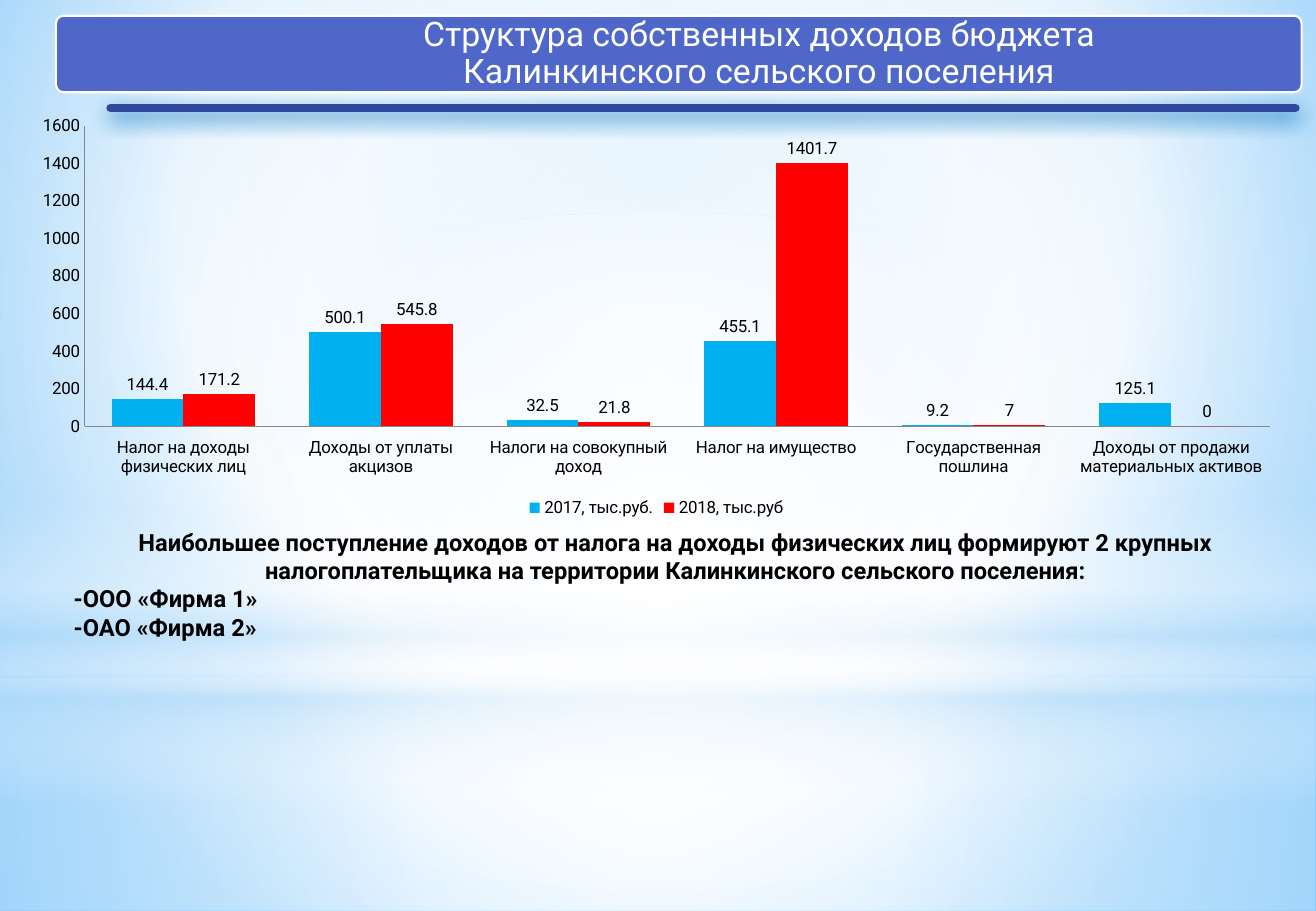
import dataclasses

import lxml.etree
import pptx
import pptx.chart.data
import pptx.dml.color
import pptx.enum.chart
import pptx.enum.shapes
import pptx.enum.text
import pptx.oxml.ns
import pptx.util

Cm = pptx.util.Cm
Pt = pptx.util.Pt
qn = pptx.oxml.ns.qn
SHAPE = pptx.enum.shapes.MSO_SHAPE
ALIGN = pptx.enum.text.PP_ALIGN
ANCHOR = pptx.enum.text.MSO_ANCHOR


@dataclasses.dataclass(frozen=True)
class Theme:
    font: str = "Roboto"
    white: str = "FFFFFF"
    black: str = "000000"
    pale: str = "B4DCFA"
    sky: str = "9ED5FF"
    azure: str = "5BB9FF"
    banner: str = "4E67C8"
    rule: str = "31489F"
    shadow: str = "0070C0"
    axis: str = "878787"
    year_2017: str = "00B0F0"
    year_2018: str = "FF0000"
    title_size: int = 20
    body_size: int = 14
    chart_size: int = 10


THEME = Theme()
WIDTH, HEIGHT = 27.51, 19.05
CENTRE = (50, 50, 50, 50)

CATEGORIES = [
    "Налог на доходы физических лиц",
    "Доходы от уплаты акцизов",
    "Налоги на совокупный доход",
    "Налог на имущество",
    "Государственная пошлина",
    "Доходы от продажи материальных активов",
]
SERIES = [
    ("2017, тыс.руб.", (144.4, 500.1, 32.5, 455.1, 9.2, 125.1), THEME.year_2017),
    ("2018, тыс.руб", (171.2, 545.8, 21.8, 1401.7, 7, 0), THEME.year_2018),
]


def rgb(color):
    return pptx.dml.color.RGBColor.from_string(color)


def add_node(parent, tag, **attrs):
    return lxml.etree.SubElement(parent, qn(tag), {k: str(v) for k, v in attrs.items()})


def set_gradient(fill, owner, stops, focus=None):
    fill.solid()
    solid = owner.find(".//" + qn("a:solidFill"))
    grad = lxml.etree.Element(qn("a:gradFill"), rotWithShape="1")
    stop_list = add_node(grad, "a:gsLst")
    for position, color, opacity in stops:
        gs = add_node(stop_list, "a:gs", pos=position * 1000)
        clr = add_node(gs, "a:srgbClr", val=color)
        if opacity < 100:
            add_node(clr, "a:alpha", val=opacity * 1000)
    if focus:
        circle = add_node(grad, "a:path", path="circle")
        sides = {side: pct * 1000 for side, pct in zip("ltrb", focus)}
        add_node(circle, "a:fillToRect", **sides)
    else:
        add_node(grad, "a:lin", ang=5400000, scaled=0)
    solid.getparent().replace(solid, grad)


def add_glow(s, kind, top, height, stops, focus=None):
    sp = s.shapes.add_shape(kind, Cm(0), Cm(top), Cm(WIDTH), Cm(height))
    sp.shadow.inherit = False
    set_gradient(sp.fill, sp._element.spPr, stops, focus)
    sp.line.fill.background()


def add_backdrop(s):
    t = THEME
    s.background.fill.solid()
    set_gradient(s.background.fill, s._element.cSld,
                 [(0, t.sky, 100), (60, t.white, 100), (100, t.azure, 100)], (20, 10, 20, 60))
    add_glow(s, SHAPE.RECTANGLE, 14.17, HEIGHT - 14.17,
             [(0, t.white, 91), (37, t.white, 76), (100, t.pale, 79)], CENTRE)
    add_glow(s, SHAPE.RECTANGLE, 0, 14.17,
             [(0, t.white, 89), (48, t.white, 62), (100, t.pale, 79)], CENTRE)
    add_glow(s, SHAPE.RECTANGLE, 10.46, 6.35,
             [(0, t.white, 0), (29, t.white, 30), (45, t.pale, 40),
              (55, t.white, 26), (65, t.pale, 60), (100, t.white, 0)])
    add_glow(s, SHAPE.OVAL, 4.44, 14.17, [(0, t.white, 100), (56, t.white, 0)], CENTRE)


def add_banner(s, left, top, width, height):
    sp = s.shapes.add_shape(SHAPE.ROUNDED_RECTANGLE, Cm(left), Cm(top), Cm(width), Cm(height))
    sp.adjustments[0] = 0.1
    sp.shadow.inherit = False
    sp.fill.solid()
    sp.fill.fore_color.rgb = rgb(THEME.banner)
    sp.line.color.rgb = rgb(THEME.white)
    sp.line.width = Pt(1.25)


def add_text_box(s, left, top, width, height, anchor=ANCHOR.TOP, insets=(0.25, 0.13, 0.25, 0.13)):
    tf = s.shapes.add_textbox(Cm(left), Cm(top), Cm(width), Cm(height)).text_frame
    tf.word_wrap = True
    tf.vertical_anchor = anchor
    tf.margin_left, tf.margin_top, tf.margin_right, tf.margin_bottom = map(Cm, insets)
    return tf


def write(p, text, size=THEME.body_size, color=THEME.black, bold=False,
          align=ALIGN.LEFT, spacing=1.0, indent=0):
    p.alignment = align
    p.line_spacing = spacing
    if indent:
        p._p.get_or_add_pPr().set("marL", str(Cm(indent)))
    r = p.add_run()
    r.text = text
    r.font.name = THEME.font
    r.font.size = Pt(size)
    r.font.bold = bold
    r.font.color.rgb = rgb(color)


def add_rule(s, left, right, y):
    line = s.shapes.add_connector(pptx.enum.shapes.MSO_CONNECTOR.STRAIGHT,
                                  Cm(left), Cm(y), Cm(right), Cm(y))
    line.line.color.rgb = rgb(THEME.rule)
    line.line.width = Pt(5)
    line.line._ln.set("cap", "rnd")
    effects = add_node(line._element.spPr, "a:effectLst")
    shadow = add_node(effects, "a:outerShdw", blurRad=Pt(12), dist=Pt(4),
                      dir=5400000, rotWithShape=0)
    add_node(shadow, "a:srgbClr", val=THEME.shadow)


def add_income_chart(s, left, top, width, height):
    enums = pptx.enum.chart
    data = pptx.chart.data.CategoryChartData()
    data.categories = CATEGORIES
    for name, values, _ in SERIES:
        data.add_series(name, values)
    chart = s.shapes.add_chart(enums.XL_CHART_TYPE.COLUMN_CLUSTERED,
                               Cm(left), Cm(top), Cm(width), Cm(height), data).chart
    chart.font.name = THEME.font
    chart.font.size = Pt(THEME.chart_size)
    chart.font.color.rgb = rgb(THEME.black)
    chart.has_title = False
    chart.has_legend = True
    chart.legend.position = enums.XL_LEGEND_POSITION.BOTTOM
    chart.legend.include_in_layout = False
    for axis in (chart.category_axis, chart.value_axis):
        axis.has_major_gridlines = False
        axis.major_tick_mark = enums.XL_TICK_MARK.NONE
        axis.minor_tick_mark = enums.XL_TICK_MARK.NONE
        axis.format.line.color.rgb = rgb(THEME.axis)
    chart.category_axis.tick_label_position = enums.XL_TICK_LABEL_POSITION.LOW
    plot = chart.plots[0]
    plot.gap_width = 75
    plot.vary_by_categories = False
    for series, (_, _, color) in zip(plot.series, SERIES):
        series.format.fill.solid()
        series.format.fill.fore_color.rgb = rgb(color)
        series.data_labels.show_value = True
        series.data_labels.position = enums.XL_LABEL_POSITION.OUTSIDE_END


def main():
    prs = pptx.Presentation()
    prs.slide_width, prs.slide_height = Cm(WIDTH), Cm(HEIGHT)
    s = prs.slides.add_slide(prs.slide_layouts[6])
    add_backdrop(s)
    add_banner(s, 1.17, 0.33, 26.04, 1.6)
    title = add_text_box(s, 6.53, 0.33, 20.68, 1.6, ANCHOR.MIDDLE, (0, 0.2, 2, 0.2))
    write(title.paragraphs[0], "Структура собственных доходов бюджета Калинкинского сельского поселения",
          size=THEME.title_size, color=THEME.white, align=ALIGN.CENTER, spacing=0.9)
    add_rule(s, 2.31, 27.08, 2.26)
    add_income_chart(s, 0.36, 2.26, 26.72, 8.66)
    note = add_text_box(s, 1.17, 10.9, 25.91, 2.64)
    write(note.paragraphs[0],
          "Наибольшее поступление доходов от налога на доходы физических лиц формируют "
          "2 крупных налогоплательщика на территории Калинкинского сельского поселения:",
          bold=True, align=ALIGN.CENTER)
    for taxpayer in ("-ООО «Фирма 1»", "-ОАО «Фирма 2»"):
        write(note.add_paragraph(), taxpayer, bold=True, indent=0.12)
    prs.save("out.pptx")


if __name__ == "__main__":
    main()
